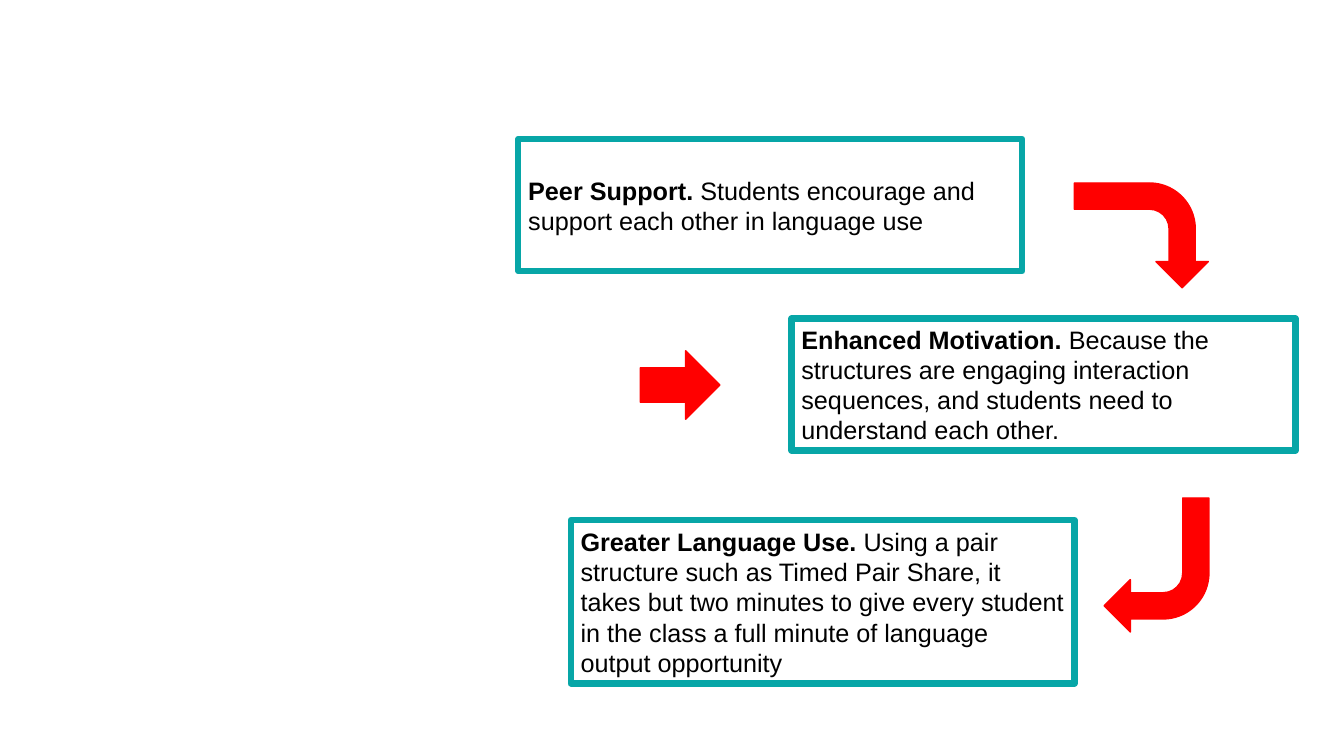
from pptx import Presentation
from pptx.dml.color import RGBColor
from pptx.enum.shapes import MSO_SHAPE as Shape
from pptx.enum.text import MSO_ANCHOR as Anchor
from pptx.util import Inches, Pt

WIDE, HIGH = Inches(13.33), Inches(7.5)
TEAL, RED, BLACK = "07A6A7", "FF0000", "000000"
BOX_W = 37.5

# Left, top and height in percent of the slide, then heading and text
BOXES = [
    (38.56, 18.4, 17.47, "Peer Support.",
     "Students encourage and support each other in language use"),
    (58.89, 42.13, 17.47, "Enhanced Motivation.",
     "Because the structures are engaging interaction sequences, "
     "and students need to understand each other."),
    (42.46, 68.8, 21.6, "Greater Language Use.",
     "Using a pair structure such as Timed Pair Share, it takes but two "
     "minutes to give every student in the class a full minute of language "
     "output opportunity"),
]

# Preset, frame in percent of the slide, turn in degrees
ARROWS = [
    (Shape.BENT_ARROW, (81.02, 22.27, 7.8, 17.73), 90),
    (Shape.RIGHT_ARROW, (47.64, 46.4, 5.93, 9.07), 0),
    (Shape.BENT_ARROW, (82.15, 65.87, 7.8, 17.73), 180),
]


def color(code):
    return RGBColor.from_string(code)


def place(left, top, width, height):
    """Turn percent shares into slide lengths."""
    return [int(share * side / 100) for share, side in
            ((left, WIDE), (top, HIGH), (width, WIDE), (height, HIGH))]


def outline(shape, code, points):
    shape.line.color.rgb = color(code)
    shape.line.width = Pt(points)


def add_box(slide, left, top, height, head, text):
    box = slide.shapes.add_textbox(*place(left, top, BOX_W, height))
    outline(box, TEAL, 4.5)
    frame = box.text_frame
    frame.word_wrap = True
    frame.vertical_anchor = Anchor.MIDDLE
    para = frame.paragraphs[0]
    para.font.name = "Arial"
    para.font.size = Pt(18)
    para.font.color.rgb = color(BLACK)
    para.add_run().text = head
    para.runs[0].font.bold = True
    para.add_run().text = " " + text


def add_arrow(slide, preset, share, turn):
    arrow = slide.shapes.add_shape(preset, *place(*share))
    arrow.rotation = turn
    arrow.shadow.inherit = False
    arrow.fill.solid()
    arrow.fill.fore_color.rgb = color(RED)
    outline(arrow, RED, 1)


def main():
    deck = Presentation()
    deck.slide_width, deck.slide_height = WIDE, HIGH
    slide = deck.slides.add_slide(deck.slide_layouts[6])
    # Benefit boxes
    for box in BOXES:
        add_box(slide, *box)
    # Arrows that link them
    for arrow in ARROWS:
        add_arrow(slide, *arrow)
    deck.save("out.pptx")


if __name__ == "__main__":
    main()
